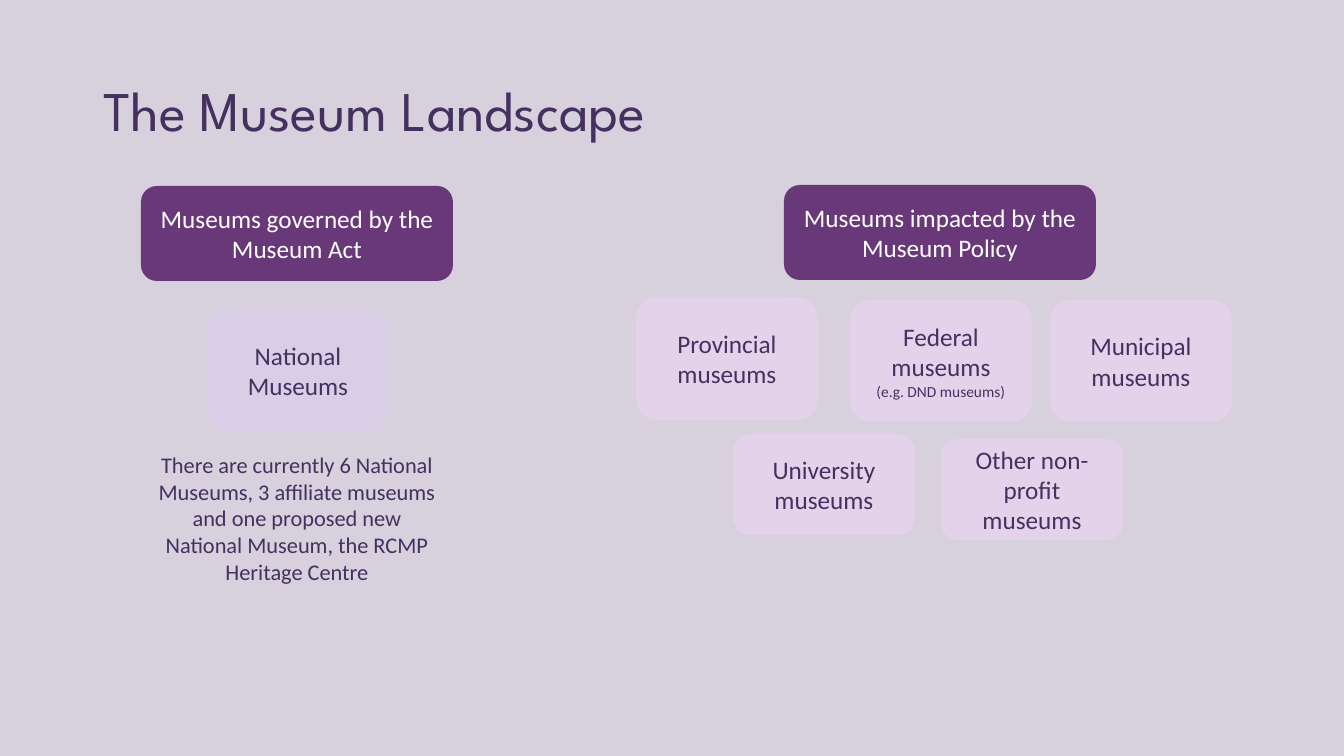
from pptx import Presentation, util as u
from pptx.dml.color import RGBColor
from pptx.enum import shapes, text

PLUM = RGBColor(0x68, 0x38, 0x79)
INK = RGBColor(0x44, 0x31, 0x60)
WHITE = RGBColor(0xFF, 0xFF, 0xFF)
LAVENDER = RGBColor(0xD8, 0xCF, 0xE6)
PINK = RGBColor(0xE4, 0xD1, 0xEA)
BACKGROUND = RGBColor(0xD7, 0xD1, 0xDD)
PX_PER_INCH = 100.8
HEADER_WIDTH, HEADER_HEIGHT = 312, 95
TYPE_WIDTH = 182


def px(length):
    return u.Inches(length / PX_PER_INCH)


def add_box(left, top, width, height, lines, fill, color):
    """Add a rounded box; lines holds (wording, point size) pairs."""
    shape = slide.shapes.add_shape(
        shapes.MSO_SHAPE.ROUNDED_RECTANGLE, px(left), px(top), px(width), px(height))
    shape.shadow.inherit = False
    shape.line.fill.background()
    if fill is None:
        shape.fill.background()
    else:
        shape.fill.solid()
        shape.fill.fore_color.rgb = fill
    frame = shape.text_frame
    frame.word_wrap = True
    frame.vertical_anchor = text.MSO_ANCHOR.MIDDLE
    frame.text = "\n".join(wording for wording, size in lines)
    for paragraph, (wording, size) in zip(frame.paragraphs, lines):
        paragraph.alignment = text.PP_ALIGN.CENTER
        font = paragraph.runs[0].font
        font.name = "Calibri"
        font.size = u.Pt(size)
        font.color.rgb = color


presentation = Presentation()
presentation.slide_width = px(1344)
presentation.slide_height = px(756)
slide = presentation.slides.add_slide(presentation.slide_layouts[5])
slide.background.fill.solid()
slide.background.fill.fore_color.rgb = BACKGROUND

# Title
title = slide.shapes.title
title.left, title.top, title.width, title.height = px(93), px(40), px(1159), px(146)
title.text_frame.text = "The Museum Landscape"
title.text_frame.vertical_anchor = text.MSO_ANCHOR.MIDDLE
heading = title.text_frame.paragraphs[0]
heading.alignment = text.PP_ALIGN.LEFT
heading.line_spacing = 0.9
heading_font = heading.runs[0].font
heading_font.name = "League Spartan"
heading_font.size = u.Pt(40)
heading_font.color.rgb = INK

# Group headers
for left, top, wording in [
    (141, 186, "Museums governed by the Museum Act"),
    (784, 185, "Museums impacted by the Museum Policy"),
]:
    add_box(left, top, HEADER_WIDTH, HEADER_HEIGHT, [(wording, 18)], PLUM, WHITE)

# Museum types
for left, top, height, fill, lines in [
    (207, 310, 121, LAVENDER, [("National Museums", 18)]),
    (636, 297, 123, PINK, [("Provincial museums", 18)]),
    (850, 300, 122, PINK, [("Federal museums", 18), ("(e.g. DND museums)", 11)]),
    (1050, 300, 122, PINK, [("Municipal museums", 18)]),
    (733, 434, 101, PINK, [("University museums", 18)]),
    (941, 439, 101, PINK, [("Other non-profit museums", 18)]),
]:
    add_box(left, top, TYPE_WIDTH, height, lines, fill, INK)

# Note on the national museums
note = ("There are currently 6 National Museums, 3 affiliate museums and one "
        "proposed new National Museum, the RCMP Heritage Centre")
add_box(141, 449, HEADER_WIDTH, 138, [(note, 16)], None, INK)

presentation.save("out.pptx")
